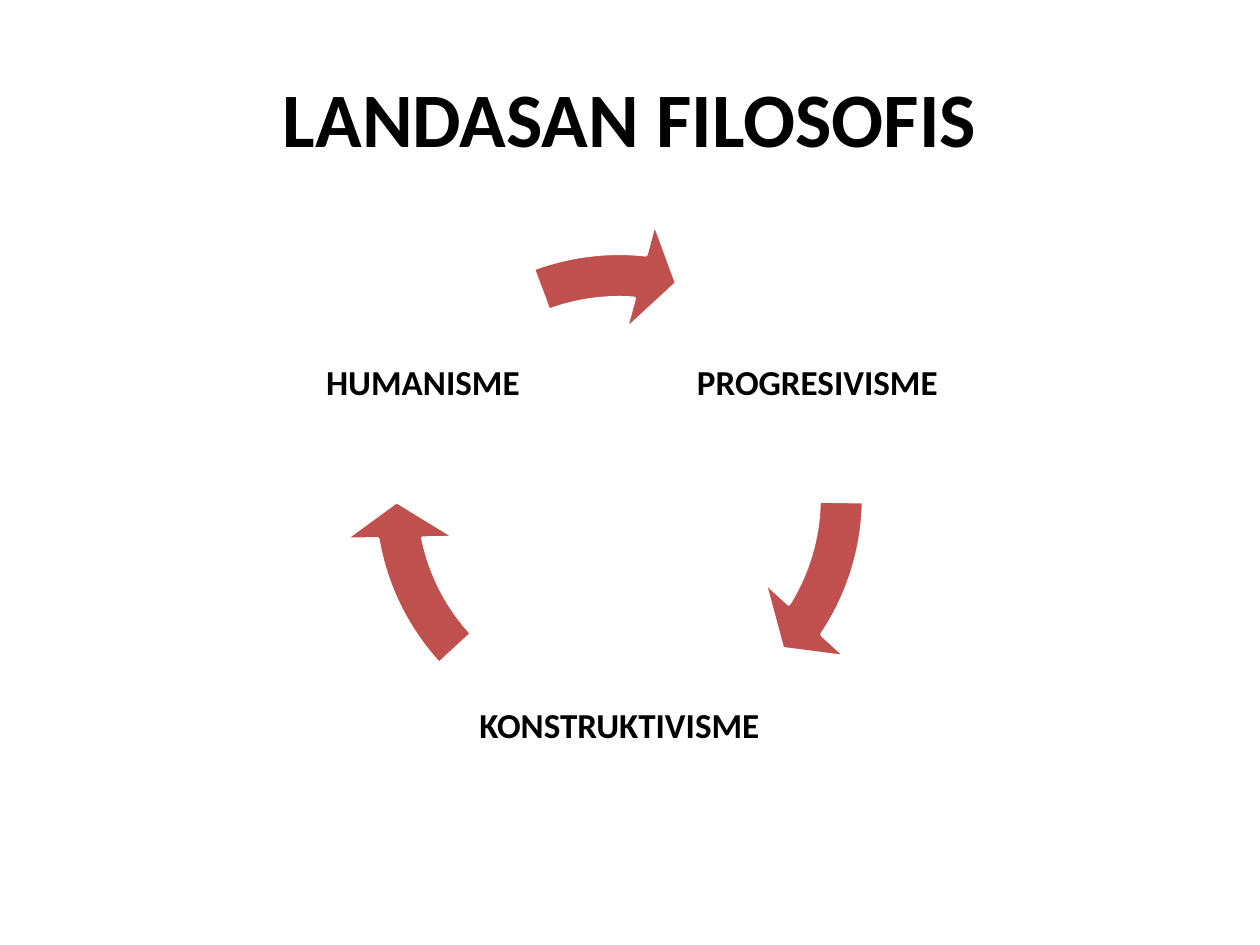
from pptx import Presentation
from pptx.dml.color import RGBColor
from pptx.enum.shapes import MSO_SHAPE as Shape
from pptx.enum.text import MSO_ANCHOR as Anchor, PP_ALIGN as Align
from pptx.util import Emu, Inches, Pt

SCALE = Inches(1) // 126


def px(n):
    return Emu(n * SCALE)


def color(code):
    return RGBColor.from_string(code)


def write(frame, text, size=20, bold=True, font="Calibri", ink="000000", space=1.0):
    par = frame.paragraphs[0]
    par.alignment = Align.CENTER
    par.line_spacing = space
    run = par.add_run()
    run.text = text
    run.font.name = font
    run.font.size = Pt(size)
    run.font.bold = bold
    run.font.color.rgb = color(ink)


class Deck:
    """Hold the style and the current slide, and draw its elements."""

    red = "C0504D"
    white = "FFFFFF"
    ring = (341, 220, 556, 556)

    def __init__(self, show):
        self.slide = show.slides.add_slide(show.slide_layouts[6])

    def label(self, text, box, inset=4, **form):
        frame = self.slide.shapes.add_textbox(*map(px, box)).text_frame
        frame.word_wrap = True
        frame.vertical_anchor = Anchor.MIDDLE
        frame.margin_left = frame.margin_right = px(inset)
        frame.margin_top = frame.margin_bottom = px(inset)
        write(frame, text, **form)

    def arrow(self, start, end):
        arc = self.slide.shapes.add_shape(Shape.CIRCULAR_ARROW, *map(px, self.ring))
        arc.shadow.inherit = False
        arc.fill.solid()
        arc.fill.fore_color.rgb = color(self.red)
        arc.line.color.rgb = color(self.white)
        arc.line.width = Pt(2)
        head, unit = 9.61, 0.6
        values = (0.08, head * unit, end * unit, start * unit, 0.1)
        for i, value in enumerate(values):
            arc.adjustments[i] = value


def main():
    show = Presentation()
    show.slide_width, show.slide_height = px(1260), px(945)
    deck = Deck(show)
    deck.label("LANDASAN FILOSOFIS", (63, 38, 1134, 158), inset=8, size=44)
    steps = [
        ("PROGRESIVISME", 679, 266, 277, 0.89, 33.06),
        ("KONSTRUKTIVISME", 452, 609, 335, 137.33, 169.5),
        ("HUMANISME", 305, 266, 236, 249.48, 275.46),
    ]
    for text, left, top, width, start, end in steps:
        deck.label(text, (left, top, width, 236), space=0.9)
        deck.arrow(start, end)
    show.save("out.pptx")


if __name__ == "__main__":
    main()
